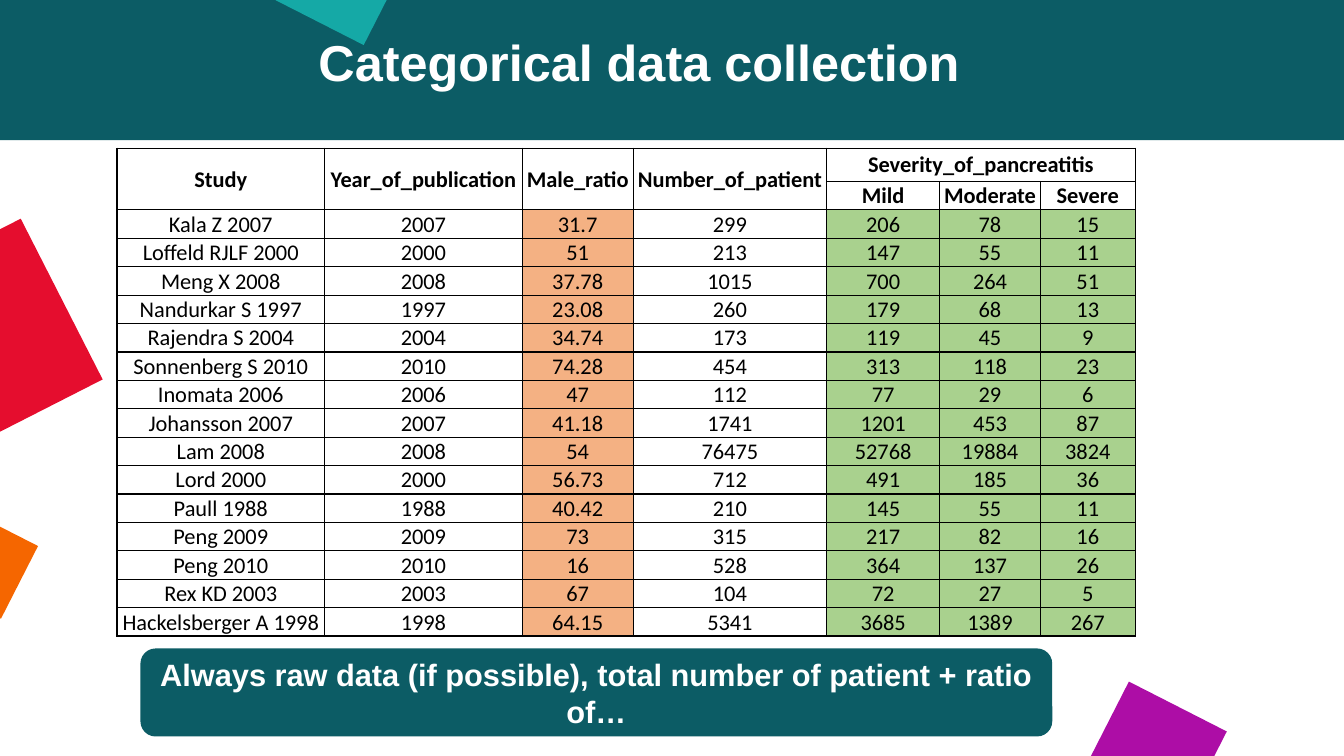
from dataclasses import dataclass

from lxml import etree
from pptx import Presentation
from pptx.dml.color import RGBColor
from pptx.enum.shapes import MSO_SHAPE
from pptx.enum.text import MSO_ANCHOR, MSO_AUTO_SIZE, PP_ALIGN
from pptx.oxml.ns import qn
from pptx.util import Inches, Pt

RECT = MSO_SHAPE.RECTANGLE
ROUND_RECT = MSO_SHAPE.ROUNDED_RECTANGLE
TOP, MIDDLE = MSO_ANCHOR.TOP, MSO_ANCHOR.MIDDLE
NO_FIT = MSO_AUTO_SIZE.NONE
CENTER = PP_ALIGN.CENTER


@dataclass(frozen=True)
class Theme:
    teal: str = "0C5C65"
    red: str = "E50D2E"
    purple: str = "AD0DA6"
    orange: str = "F56600"
    aqua: str = "15A9A6"
    peach: str = "F4B183"
    green: str = "A9D18E"
    black: str = "000000"
    white: str = "FFFFFF"
    heading_font: str = "Arial"
    table_font: str = "Calibri"
    title_size: int = 36
    callout_size: int = 22
    table_size: int = 16


def write(tf, text, *, font, size, color, bold=False, anchor=MIDDLE, spacing=None):
    tf.word_wrap = True
    tf.vertical_anchor = anchor
    p = tf.paragraphs[0]
    p.alignment = CENTER
    if spacing:
        p.line_spacing = spacing
    r = p.add_run()
    r.text = text
    r.font.name = font
    r.font.size = Pt(size)
    r.font.bold = bold
    r.font.color.rgb = RGBColor.from_string(color)


class SlideBuilder:
    """Draws styled elements on one slide."""

    def __init__(self, slide, theme):
        self.s = slide
        self.theme = theme

    def title(self, text, box):
        t = self.theme
        sp = self.s.shapes.title
        sp.left, sp.top, sp.width, sp.height = map(Inches, box)
        sp.text_frame.auto_size = NO_FIT
        write(sp.text_frame, text, font=t.heading_font, size=t.title_size,
              color=t.white, bold=True, anchor=TOP, spacing=0.9)
        sp.element.getparent().append(sp.element)

    def block(self, box, color, rotation=0, kind=RECT):
        sp = self.s.shapes.add_shape(kind, *map(Inches, box))
        sp.shadow.inherit = False
        sp.fill.solid()
        sp.fill.fore_color.rgb = RGBColor.from_string(color)
        sp.line.fill.background()
        sp.rotation = rotation
        return sp

    def callout(self, text, box):
        t = self.theme
        sp = self.block(box, t.teal, kind=ROUND_RECT)
        sp.line.color.rgb = RGBColor.from_string(t.teal)
        sp.line.width = Pt(1)
        write(sp.text_frame, text, font=t.heading_font, size=t.callout_size,
              color=t.white, bold=True)

    def table(self, rows, left, top, widths, heights, merges, fills, header_rows):
        t = self.theme
        frame = self.s.shapes.add_table(
            len(rows), len(widths), Inches(left), Inches(top),
            Inches(sum(widths)), Inches(sum(heights)))
        table = frame.table
        table.first_row = table.horz_banding = False
        for column, width in zip(table.columns, widths):
            column.width = Inches(width)
        for row, height in zip(table.rows, heights):
            row.height = Inches(height)
        for tc in frame.element.iter(qn("a:tc")):
            self.border(tc.get_or_add_tcPr())
        for start, end in merges:
            table.cell(*start).merge(table.cell(*end))
        for i, row in enumerate(rows):
            header = i < header_rows
            for j, text in enumerate(row):
                cell = table.cell(i, j)
                cell.margin_left = cell.margin_right = cell.margin_top = Inches(0.01)
                cell.margin_bottom = 0
                cell.vertical_anchor = MIDDLE
                if j in fills and not header:
                    cell.fill.solid()
                    cell.fill.fore_color.rgb = RGBColor.from_string(fills[j])
                else:
                    cell.fill.background()
                if text:
                    write(cell.text_frame, text, font=t.table_font,
                          size=t.table_size, color=t.black, bold=header)
                    cell.text_frame.word_wrap = None
                    cell.text_frame.vertical_anchor = None

    def border(self, tcPr):
        for side in ("a:lnL", "a:lnR", "a:lnT", "a:lnB"):
            ln = etree.SubElement(tcPr, qn(side), w=str(Pt(1)))
            fill = etree.SubElement(ln, qn("a:solidFill"))
            etree.SubElement(fill, qn("a:srgbClr"), val=self.theme.black)


HEADERS = [
    ["Study", "Year_of_publication", "Male_ratio", "Number_of_patient",
     "Severity_of_pancreatitis", "", ""],
    ["", "", "", "", "Mild", "Moderate", "Severe"],
]
STUDIES = [
    ("Kala Z 2007", "31.7", 299, 206, 78, 15),
    ("Loffeld RJLF 2000", "51", 213, 147, 55, 11),
    ("Meng X 2008", "37.78", 1015, 700, 264, 51),
    ("Nandurkar S 1997", "23.08", 260, 179, 68, 13),
    ("Rajendra S 2004", "34.74", 173, 119, 45, 9),
    ("Sonnenberg S 2010", "74.28", 454, 313, 118, 23),
    ("Inomata 2006", "47", 112, 77, 29, 6),
    ("Johansson 2007", "41.18", 1741, 1201, 453, 87),
    ("Lam 2008", "54", 76475, 52768, 19884, 3824),
    ("Lord 2000", "56.73", 712, 491, 185, 36),
    ("Paull 1988", "40.42", 210, 145, 55, 11),
    ("Peng 2009", "73", 315, 217, 82, 16),
    ("Peng 2010", "16", 528, 364, 137, 26),
    ("Rex KD 2003", "67", 104, 72, 27, 5),
    ("Hackelsberger A 1998", "64.15", 5341, 3685, 1389, 267),
]


def main():
    prs = Presentation()
    prs.slide_width, prs.slide_height = Inches(13.33), Inches(7.5)
    theme = Theme()
    b = SlideBuilder(prs.slides.add_slide(prs.slide_layouts[5]), theme)

    b.block((0, 0, 13.33, 1.39), theme.teal)
    b.block((-1.09, 2.48, 1.8, 1.79), theme.red, 333)
    b.block((10.89, 6.95, 1.09, 1.09), theme.purple, 27)
    b.block((-0.61, 5.18, 0.85, 0.81), theme.orange, 27)
    b.block((2.91, -0.73, 0.98, 1.01), theme.aqua, 27)
    b.title("Categorical data collection", (1.56, 0.33, 9.56, 0.81))

    rows = HEADERS + [
        [study, study.split()[-1], ratio, *map(str, counts)]
        for study, ratio, *counts in STUDIES
    ]
    b.table(
        rows, 1.16, 1.47,
        widths=[2.06, 1.96, 1.1, 1.92, 1.12, 1, 0.94],
        heights=[0.33] + [0.28] * (len(rows) - 1),
        merges=[((0, j), (1, j)) for j in range(4)] + [((0, 4), (0, 6))],
        fills={2: theme.peach, 4: theme.green, 5: theme.green, 6: theme.green},
        header_rows=len(HEADERS))
    b.callout("Always raw data (if possible), total number of patient + ratio of…",
              (1.4, 6.44, 9.03, 0.86))
    prs.save("out.pptx")


if __name__ == "__main__":
    main()
